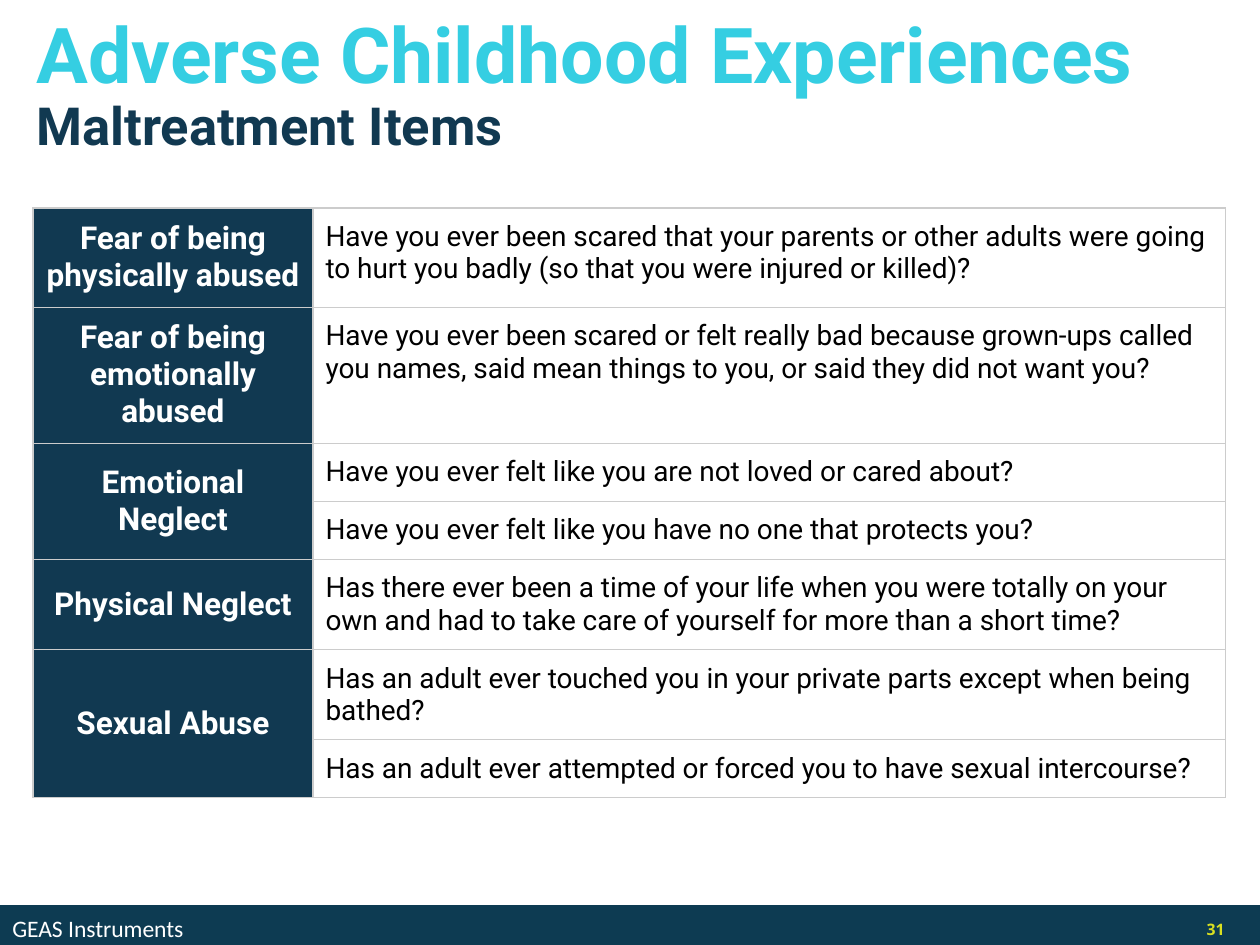
"""Builds the slide on maltreatment items among adverse childhood experiences."""
from lxml import etree
from pptx import Presentation
from pptx.dml.color import RGBColor
from pptx.enum.shapes import MSO_SHAPE
from pptx.enum.text import MSO_ANCHOR, PP_ALIGN
from pptx.oxml.ns import qn
from pptx.util import Pt

LEFT, CENTER, RIGHT = PP_ALIGN.LEFT, PP_ALIGN.CENTER, PP_ALIGN.RIGHT
TOP, MIDDLE = MSO_ANCHOR.TOP, MSO_ANCHOR.MIDDLE
RECTANGLE = MSO_SHAPE.RECTANGLE
NAVY, WHITE, BORDER = "113951", "FFFFFF", "CCCCCC"
EMU_PER_INCH, PX_PER_INCH = 914400, 126


def px(*lengths):
    return [round(length * EMU_PER_INCH / PX_PER_INCH) for length in lengths]


def add_run(paragraph, text, font, size, color, bold=False, align=LEFT):
    paragraph.alignment = align
    run = paragraph.add_run()
    run.text = text
    run.font.name = font
    run.font.size = Pt(size)
    run.font.bold = bold
    run.font.color.rgb = RGBColor.from_string(color)


presentation = Presentation()
presentation.slide_width, presentation.slide_height = px(1260, 945)
slide = presentation.slides.add_slide(presentation.slide_layouts[6])

ITEMS = [
    ("Fear of being physically abused", [
        ("Have you ever been scared that your parents or other adults were going "
         "to hurt you badly (so that you were injured or killed)?", 98)]),
    ("Fear of being emotionally abused", [
        ("Have you ever been scared or felt really bad because grown-ups called "
         "you names, said mean things to you, or said they did not want you?", 136)]),
    ("Emotional Neglect", [
        ("Have you ever felt like you are not loved or cared about?", 58),
        ("Have you ever felt like you have no one that protects you?", 58)]),
    ("Physical Neglect", [
        ("Has there ever been a time of your life when you were totally on your "
         "own and had to take care of yourself for more than a short time?", 90)]),
    ("Sexual Abuse", [
        ("Has an adult ever touched you in your private parts except when being "
         "bathed?", 90),
        ("Has an adult ever attempted or forced you to have sexual intercourse?", 58)]),
]
COLUMN_WIDTHS = [280, 913]
heights = [height for _, questions in ITEMS for _, height in questions]

table = slide.shapes.add_table(
    len(heights), 2, *px(33, 208, sum(COLUMN_WIDTHS), sum(heights))).table
table.first_row = table.horz_banding = False
for column, width in zip(table.columns, px(*COLUMN_WIDTHS)):
    column.width = width
for row, height in zip(table.rows, px(*heights)):
    row.height = height

for cell in table.iter_cells():
    cell.margin_left, cell.margin_right, cell.margin_top, cell.margin_bottom = px(*[12.6] * 4)
    cell.fill.background()
    properties = cell._tc.get_or_add_tcPr()
    for position, side in enumerate(("lnL", "lnR", "lnT", "lnB")):
        line = etree.Element(qn(f"a:{side}"), w=str(Pt(0.75)))
        fill = etree.SubElement(line, qn("a:solidFill"))
        etree.SubElement(fill, qn("a:srgbClr"), val=BORDER)
        properties.insert(position, line)

row_index = 0
for category, questions in ITEMS:
    category_cell = table.cell(row_index, 0)
    if len(questions) > 1:
        category_cell.merge(table.cell(row_index + len(questions) - 1, 0))
    category_cell.fill.solid()
    category_cell.fill.fore_color.rgb = RGBColor.from_string(NAVY)
    category_cell.vertical_anchor = MIDDLE
    add_run(category_cell.text_frame.paragraphs[0], category, "Roboto", 18, WHITE, True, CENTER)
    for question, _ in questions:
        question_cell = table.cell(row_index, 1)
        question_cell.vertical_anchor = TOP
        add_run(question_cell.text_frame.paragraphs[0], question, "Roboto", 16, "000000")
        row_index += 1

footer = slide.shapes.add_shape(RECTANGLE, *px(0, 905, 1260, 47))
footer.shadow.inherit = False
footer.fill.solid()
footer.fill.fore_color.rgb = RGBColor.from_string("0D3B52")
footer.line.fill.background()
footer.text_frame.vertical_anchor = MIDDLE
add_run(footer.text_frame.paragraphs[0], "GEAS Instruments", "Calibri", 13.5, WHITE)

number = slide.shapes.add_textbox(*px(1154, 910, 83, 38))
number.text_frame.word_wrap = True
number.text_frame.vertical_anchor = MIDDLE
add_run(number.text_frame.paragraphs[0], "31", "Open Sans", 9, "D9E021", True, RIGHT)

title = slide.shapes.add_textbox(*px(24, 11, 1260, 185))
title.text_frame.word_wrap = True
heading = title.text_frame.paragraphs[0]
subheading = title.text_frame.add_paragraph()
heading.line_spacing = subheading.line_spacing = 0.9
add_run(heading, "Adverse Childhood Experiences", "Roboto", 44, "35CEE2", True)
add_run(subheading, "Maltreatment Items", "Roboto", 30, NAVY, True)

presentation.save("out.pptx")
